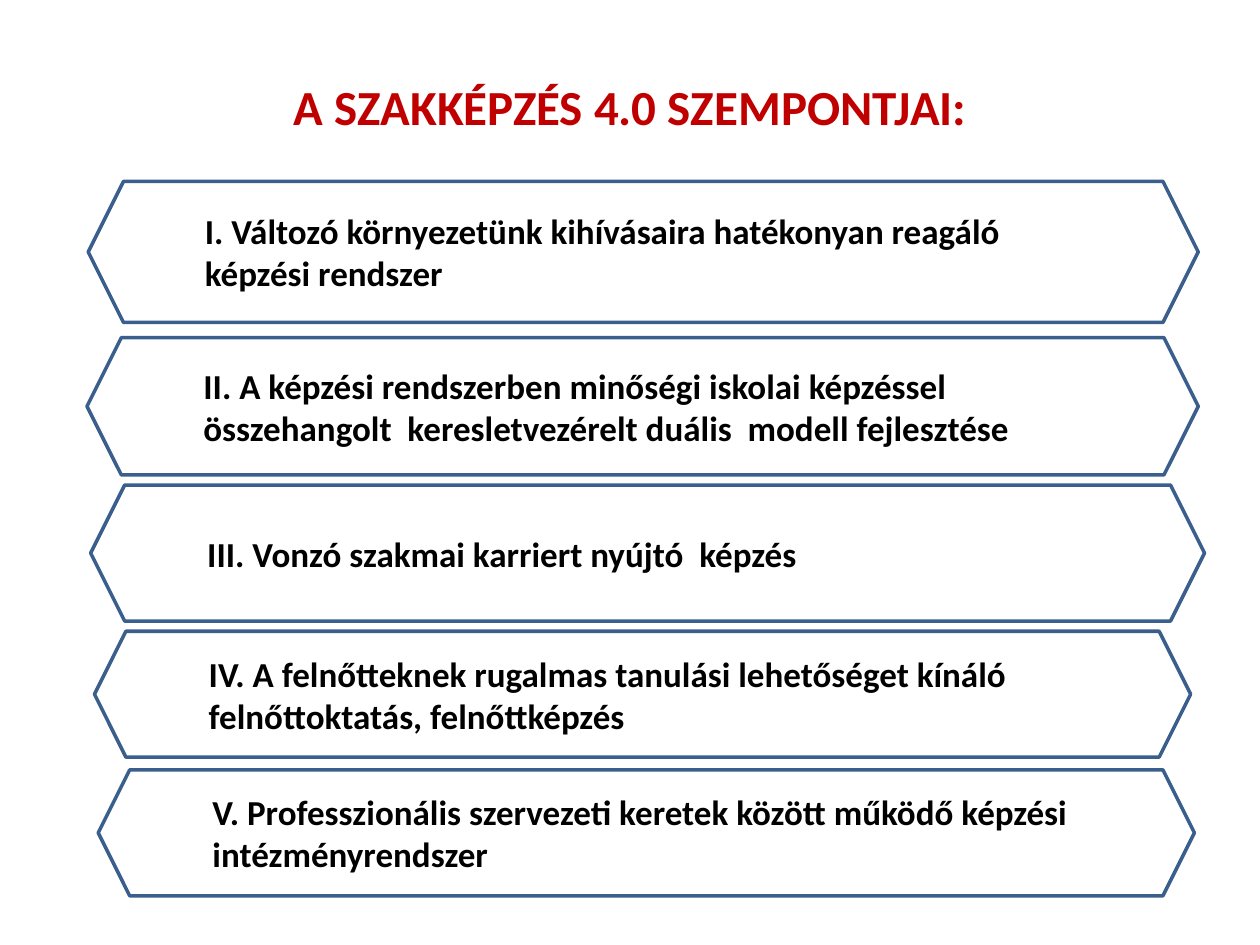
from pptx import Presentation
from pptx.dml.color import RGBColor
from pptx.enum.shapes import MSO_SHAPE
from pptx.enum.text import MSO_ANCHOR, PP_ALIGN
from pptx.util import Inches, Pt

COLORS = {"white": "FFFFFF", "outline": "3A5F8C", "title": "C00000", "text": "000000"}
SLIDE_WIDTH, SLIDE_HEIGHT = Inches(10), Inches(7.5)
TITLE = "A SZAKKÉPZÉS 4.0 SZEMPONTJAI:"
TITLE_BOX = (6.9, 5.33, 86.2, 11.73)
ASPECTS = [
    ("I. Változó környezetünk kihívásaira hatékonyan reagáló képzési rendszer",
     (7, 19.2, 88.1, 14.93)),
    ("II. A képzési rendszerben minőségi iskolai képzéssel "
     "összehangolt  keresletvezérelt duális  modell fejlesztése",
     (6.9, 35.73, 88.2, 14.53)),
    ("III. Vonzó szakmai karriert nyújtó  képzés",
     (7.2, 51.33, 88.4, 14.4)),
    ("IV. A felnőtteknek rugalmas tanulási lehetőséget kínáló\v"
     "felnőttoktatás, felnőttképzés",
     (7.5, 66.8, 87, 13.33)),
    ("V. Professzionális szervezeti keretek között működő képzési intézményrendszer",
     (7.8, 81.47, 87, 13.33)),
]


def color(name):
    """Return the named palette colour."""
    return RGBColor.from_string(COLORS[name])


def place(box):
    """Turn left, top, width and height in percent of the slide into lengths."""
    sizes = (SLIDE_WIDTH, SLIDE_HEIGHT) * 2
    return [round(size * share / 100) for size, share in zip(sizes, box)]


def write_text(shape, text, size=20, fill="text", align=PP_ALIGN.LEFT, bold=True):
    """Write one formatted paragraph, centred vertically, in the shape."""
    frame = shape.text_frame
    frame.word_wrap = True
    frame.vertical_anchor = MSO_ANCHOR.MIDDLE
    paragraph = frame.paragraphs[0]
    paragraph.text = text
    paragraph.alignment = align
    for run in paragraph.runs:
        run.font.name = "Calibri"
        run.font.size = Pt(size)
        run.font.bold = bold
        run.font.color.rgb = color(fill)


def add_title(slide, text, box):
    """Add the centred slide heading."""
    title = slide.shapes.add_textbox(*place(box))
    write_text(title, text, size=28, fill="title", align=PP_ALIGN.CENTER)


def add_hexagon(slide, text, box):
    """Add an outlined hexagon holding one aspect."""
    hexagon = slide.shapes.add_shape(MSO_SHAPE.HEXAGON, *place(box))
    hexagon.shadow.inherit = False
    hexagon.fill.solid()
    hexagon.fill.fore_color.rgb = color("white")
    hexagon.line.color.rgb = color("outline")
    hexagon.line.width = Pt(2)
    write_text(hexagon, text)


def main():
    """Build and save the slide."""
    presentation = Presentation()
    presentation.slide_width = SLIDE_WIDTH
    presentation.slide_height = SLIDE_HEIGHT
    slide = presentation.slides.add_slide(presentation.slide_layouts[6])
    add_title(slide, TITLE, TITLE_BOX)
    for text, box in ASPECTS:
        add_hexagon(slide, text, box)
    presentation.save("out.pptx")


if __name__ == "__main__":
    main()
